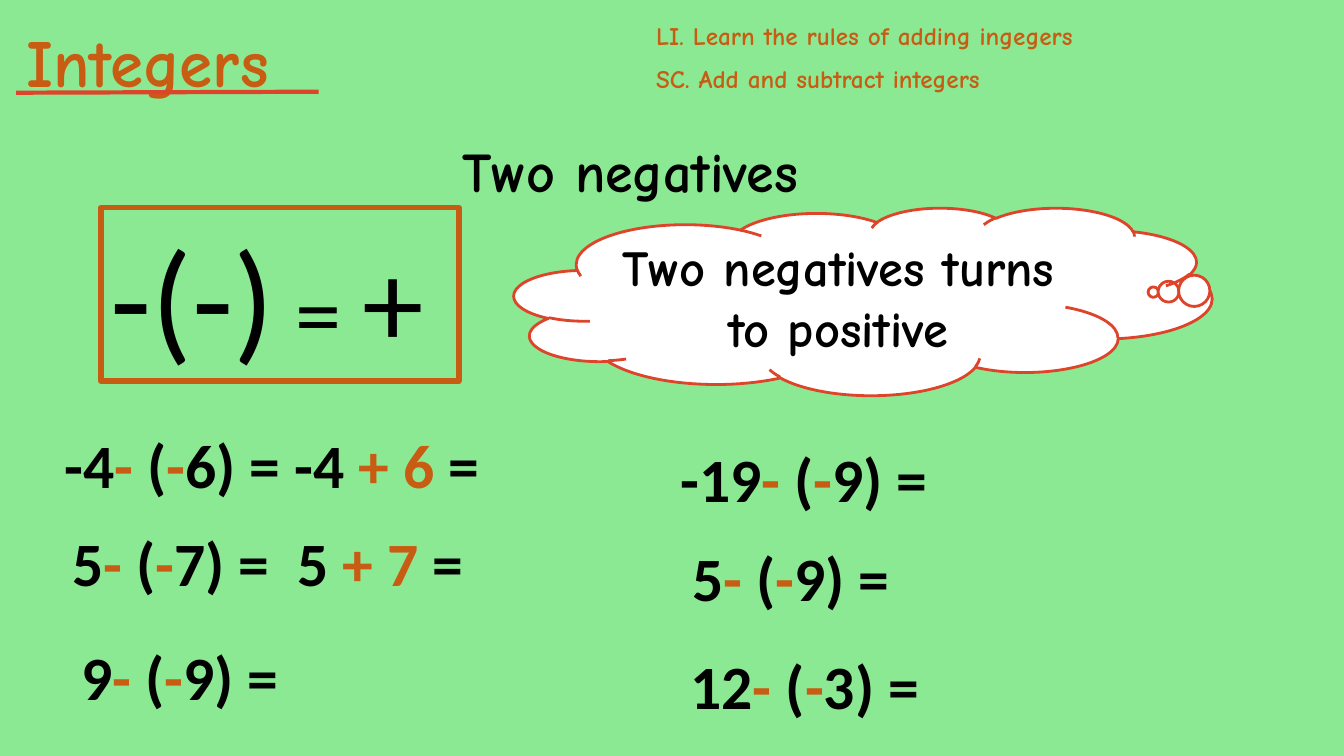
from lxml import etree
from pptx import Presentation
from pptx import util as u
from pptx.dml.color import RGBColor
from pptx.enum import shapes, text
from pptx.oxml import ns

PX = 9144
COLORS = {"green": "8BE994", "orange": "C85C12", "red": "DE442A",
          "black": "000000", "white": "FFFFFF"}


def set_up_frame(shape):
    frame = shape.text_frame
    frame.word_wrap = True
    frame.auto_size = text.MSO_AUTO_SIZE.SHAPE_TO_FIT_TEXT
    frame.vertical_anchor = text.MSO_ANCHOR.TOP
    frame.paragraphs[0].alignment = text.PP_ALIGN.LEFT
    return frame


def add_run(paragraph, words, size, font, color, bold=True):
    run = paragraph.add_run()
    run.text = words
    run.font.size = u.Pt(size)
    run.font.name = font
    run.font.bold = bold
    run.font.color.rgb = RGBColor.from_string(COLORS[color])


prs = Presentation()
prs.slide_width, prs.slide_height = 1333 * PX, 750 * PX
slide = prs.slides.add_slide(prs.slide_layouts[6])
slide.background.fill.solid()
slide.background.fill.fore_color.rgb = RGBColor.from_string(COLORS["green"])

panels = []
for kind, box, fill, line, width in [
    ("RECTANGLE", (44, 131, 1202, 77), "green", None, 0),
    ("CLOUD_CALLOUT", (510, 206, 692, 186), "white", "red", 2),
    ("RECTANGLE", (100, 206, 355, 172), None, "orange", 4),
]:
    panel = slide.shapes.add_shape(shapes.MSO_SHAPE[kind], *[n * PX for n in box])
    panel.shadow.inherit = False
    panel.fill.background()
    panel.line.fill.background()
    if fill:
        panel.fill.solid()
        panel.fill.fore_color.rgb = RGBColor.from_string(COLORS[fill])
    if line:
        panel.line.color.rgb = RGBColor.from_string(COLORS[line])
        panel.line.width = u.Pt(width)
    panels.append(panel)
topic, thought, rule = panels

topic_frame = set_up_frame(topic)
topic_frame.margin_right = 50 * PX
headings = [(topic_frame, ["Two negatives"], 40, "black")]
for box, lines, size in [
    ((16, 15, 407, 91), ["Integers"], 48),
    ((641, 15, 692, 131), ["LI. Learn the rules of adding ingegers",
                           "SC. Add and subtract integers"], 18),
]:
    heading = slide.shapes.add_textbox(*[n * PX for n in box])
    headings.append((set_up_frame(heading), lines, size, "orange"))

for frame, lines, size, color in headings:
    for number, words in enumerate(lines):
        paragraph = frame.add_paragraph() if number else frame.paragraphs[0]
        add_run(paragraph, words, size, "Comic Neue", color)
        before = etree.SubElement(paragraph._p.get_or_add_pPr(), ns.qn("a:spcBef"))
        etree.SubElement(before, ns.qn("a:spcPct"), val="50000")
topic_frame.paragraphs[0].alignment = text.PP_ALIGN.CENTER

underline = slide.shapes.add_connector(
    shapes.MSO_CONNECTOR.STRAIGHT, 16 * PX, 92 * PX, 316 * PX, 91 * PX)
underline.line.color.rgb = RGBColor.from_string(COLORS["red"])
underline.line.width = u.Pt(3)
etree.SubElement(underline._element.spPr, ns.qn("a:effectLst"))

thought.adjustments[0], thought.adjustments[1] = 0.416, -0.049
thought_frame = thought.text_frame
thought_frame.word_wrap = True
thought_frame.vertical_anchor = text.MSO_ANCHOR.MIDDLE
thought_frame.paragraphs[0].alignment = text.PP_ALIGN.CENTER
add_run(thought_frame.paragraphs[0], "Two negatives turns to positive", 36, "Comic Neue", "black")

rule_line = set_up_frame(rule).paragraphs[0]
for words, size in [("-(-)", 96), (" = ", 66), ("+", 88)]:
    add_run(rule_line, words, size, "Calibri", "black", bold=False)

for left, top, width, sum_text in [
    (54, 419, 544, "-4|- |(|-|6) = -4 |+ 6| ="),
    (62, 516, 453, "5|- |(|-|7) =  5 |+ 7 |="),
    (71, 629, 453, "9|- |(|-|9) ="),
    (675, 638, 453, "12|- |(|-|3) ="),
    (677, 531, 453, "5|- |(|-|9) ="),
    (665, 433, 453, "-19|- |(|-|9) ="),
]:
    exercise = slide.shapes.add_textbox(left * PX, top * PX, width * PX, 84 * PX)
    exercise_line = set_up_frame(exercise).paragraphs[0]
    for number, words in enumerate(sum_text.split("|")):
        add_run(exercise_line, words, 44, "Calibri", ("black", "orange")[number % 2])

prs.save("out.pptx")
